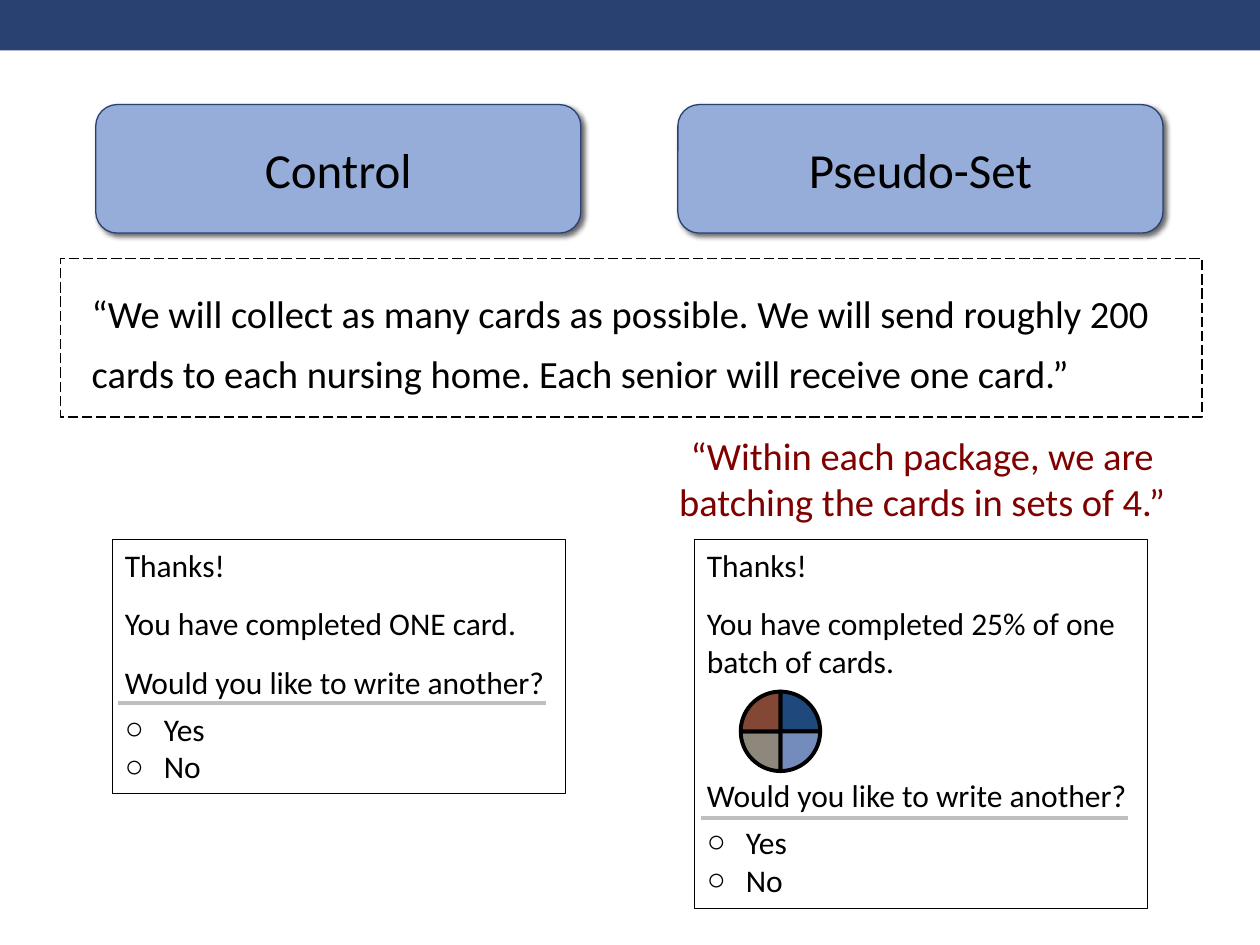
import pptx
import pptx.util
import pptx.chart.data
import pptx.dml.color
import pptx.enum.chart
import pptx.enum.dml
import pptx.enum.shapes
import pptx.enum.text
import pptx.oxml
import pptx.oxml.ns
import lxml.etree

Inches = pptx.util.Inches
Pt = pptx.util.Pt
SHAPE = pptx.enum.shapes.MSO_SHAPE
ALIGN = pptx.enum.text.PP_ALIGN
ANCHOR = pptx.enum.text.MSO_ANCHOR
NAVY, BLUE, BLACK, RED, GRAY = "294171", "97ADD9", "000000", "800000", "BFBFBF"
PIE = ["1F497D", "748CBC", "8E887C", "834736"]


def color(code):
    return pptx.dml.color.RGBColor.from_string(code)


def place(item, box):
    for name, size in zip(("left", "top", "width", "height"), box):
        setattr(item, name, Inches(size))


def add_xml(parent, tag, **attrs):
    return lxml.etree.SubElement(parent, pptx.oxml.ns.qn(tag), attrs)


def style(part, form):
    for name, value in form.items():
        setattr(part, name, value)


def outline(item, code, width=0.75):
    item.line.color.rgb = color(code)
    item.line.width = Pt(width)


def write(par, text, size, code=BLACK, **form):
    """Fill one paragraph with a single styled run."""
    style(par, form)
    run = par.add_run()
    run.text = text
    style(run.font, {"name": "Calibri", "size": Pt(size)})
    run.font.color.rgb = color(code)


def add_box(slide, kind, box, fill=None):
    shape = slide.shapes.add_shape(kind, *map(Inches, box))
    shape.shadow.inherit = False
    if fill:
        shape.fill.solid()
        shape.fill.fore_color.rgb = color(fill)
    else:
        shape.fill.background()
    shape.line.fill.background()
    return shape


def add_head(slide, left, text):
    head = add_box(slide, SHAPE.ROUNDED_RECTANGLE, (left, 0.83, 3.85, 1.02), BLUE)
    outline(head, NAVY)
    head.text_frame.vertical_anchor = ANCHOR.MIDDLE
    write(head.text_frame.paragraphs[0], text, 28, alignment=ALIGN.CENTER)
    # Soft shadow to the lower right
    effect = head._element.spPr.find(pptx.oxml.ns.qn("a:effectLst"))
    shade = add_xml(effect, "a:outerShdw", blurRad=str(Pt(3)), dist=str(Pt(2)),
                    dir="2700000", algn="tl", rotWithShape="0")
    tint = add_xml(shade, "a:srgbClr", val=BLACK)
    add_xml(tint, "a:alpha", val="60000")


def add_quote(slide, box, text, code=BLACK, **form):
    frame = slide.shapes.add_textbox(*map(Inches, box)).text_frame
    frame.word_wrap = True
    write(frame.paragraphs[0], text, 22, code, **form)


def add_rule(slide, left, top, width):
    rule = slide.shapes.add_connector(
        pptx.enum.shapes.MSO_CONNECTOR.STRAIGHT,
        *map(Inches, (left, top, left + width, top)))
    outline(rule, GRAY, 2.08)
    add_xml(rule._element.spPr, "a:effectLst")


def fill_card(slide, card, box, status, gap):
    """Message with a question, a rule and two choices."""
    left, top, width, height = box
    place(card, box)
    outline(card, BLACK)
    frame = card.text_frame
    style(frame, {"auto_size": pptx.enum.text.MSO_AUTO_SIZE.NONE,
                  "word_wrap": True, "vertical_anchor": ANCHOR.TOP})
    # Text, space before, is a choice
    rows = [("Thanks!", 0, False), (status, 12, False),
            ("Would you like to write another?", gap, False),
            ("Yes", 5, True), ("No", 0, True)]
    for num, (text, space, choice) in enumerate(rows):
        par = frame.add_paragraph() if num else frame.paragraphs[0]
        write(par, text, 18, space_before=Pt(space), alignment=ALIGN.LEFT)
        props = par._p.get_or_add_pPr()
        dent = Inches(0.31) if choice else 0
        props.set("marL", str(dent))
        props.set("indent", str(-dent))
        if choice:
            add_xml(props, "a:buChar", char="○")
        else:
            add_xml(props, "a:buNone")
    add_rule(slide, left + 0.05, top + height - 0.72, 3.39)


def add_pie(slide, box):
    data = pptx.chart.data.CategoryChartData()
    data.categories = ["1", "2", "3", "4"]
    data.add_series("Series 1", [25] * 4)
    chart = slide.shapes.add_chart(
        pptx.enum.chart.XL_CHART_TYPE.PIE, *map(Inches, box), data).chart
    style(chart, {"has_title": False, "has_legend": False})
    style(chart.font, {"name": "Cambria", "size": Pt(18)})
    chart.font.color.rgb = color(BLACK)
    plot = chart.plots[0]
    plot.vary_by_categories = True
    for num, code in enumerate(PIE):
        form = plot.series[0].points[num].format
        form.fill.solid()
        form.fill.fore_color.rgb = color(code)
        outline(form, BLACK, 2.25)
    # Fixed inner plot area
    area = chart._chartSpace.chart.plotArea
    for old in area.findall(pptx.oxml.ns.qn("c:layout")):
        area.remove(old)
    layout = add_xml(area, "c:layout")
    area.insert(0, layout)
    manual = add_xml(layout, "c:manualLayout")
    for tag, value in (("layoutTarget", "inner"), ("xMode", "edge"),
                       ("yMode", "edge"), ("x", "0.23"), ("y", "0.07"),
                       ("w", "0.54"), ("h", "0.89")):
        add_xml(manual, "c:" + tag, val=value)


def main():
    deck = pptx.Presentation()
    style(deck, {"slide_width": Inches(10), "slide_height": Inches(7.5)})
    slide = deck.slides.add_slide(deck.slide_layouts[3])
    title, *cards = slide.placeholders
    title._element.getparent().remove(title._element)

    # Top band and column heads
    add_box(slide, SHAPE.RECTANGLE, (0, 0, 10, 0.4), NAVY)
    add_head(slide, 0.76, "Control")
    add_head(slide, 5.38, "Pseudo-Set")

    # Shared message in a dashed frame
    frame = add_box(slide, SHAPE.RECTANGLE, (0.48, 2.05, 9.06, 1.26))
    outline(frame, BLACK)
    frame.line.dash_style = pptx.enum.dml.MSO_LINE.LONG_DASH
    add_quote(slide, (0.63, 2.14, 8.74, 1.05),
              "“We will collect as many cards as possible. We will send roughly "
              "200 cards to each nursing home. Each senior will receive one card.”",
              line_spacing=1.3)
    add_quote(slide, (5.21, 3.38, 4.22, 0.84),
              "“Within each package, we are batching the cards in sets of 4.”",
              RED, alignment=ALIGN.CENTER)

    # Cards for the two groups
    fill_card(slide, cards[0], (0.89, 4.28, 3.6, 2.02),
              "You have completed ONE card.", 12)
    fill_card(slide, cards[1], (5.51, 4.28, 3.6, 2.93),
              "You have completed 25% of one batch of cards.", 55)
    add_pie(slide, (5.61, 5.44, 1.17, 0.71))
    deck.save("out.pptx")


if __name__ == "__main__":
    main()
